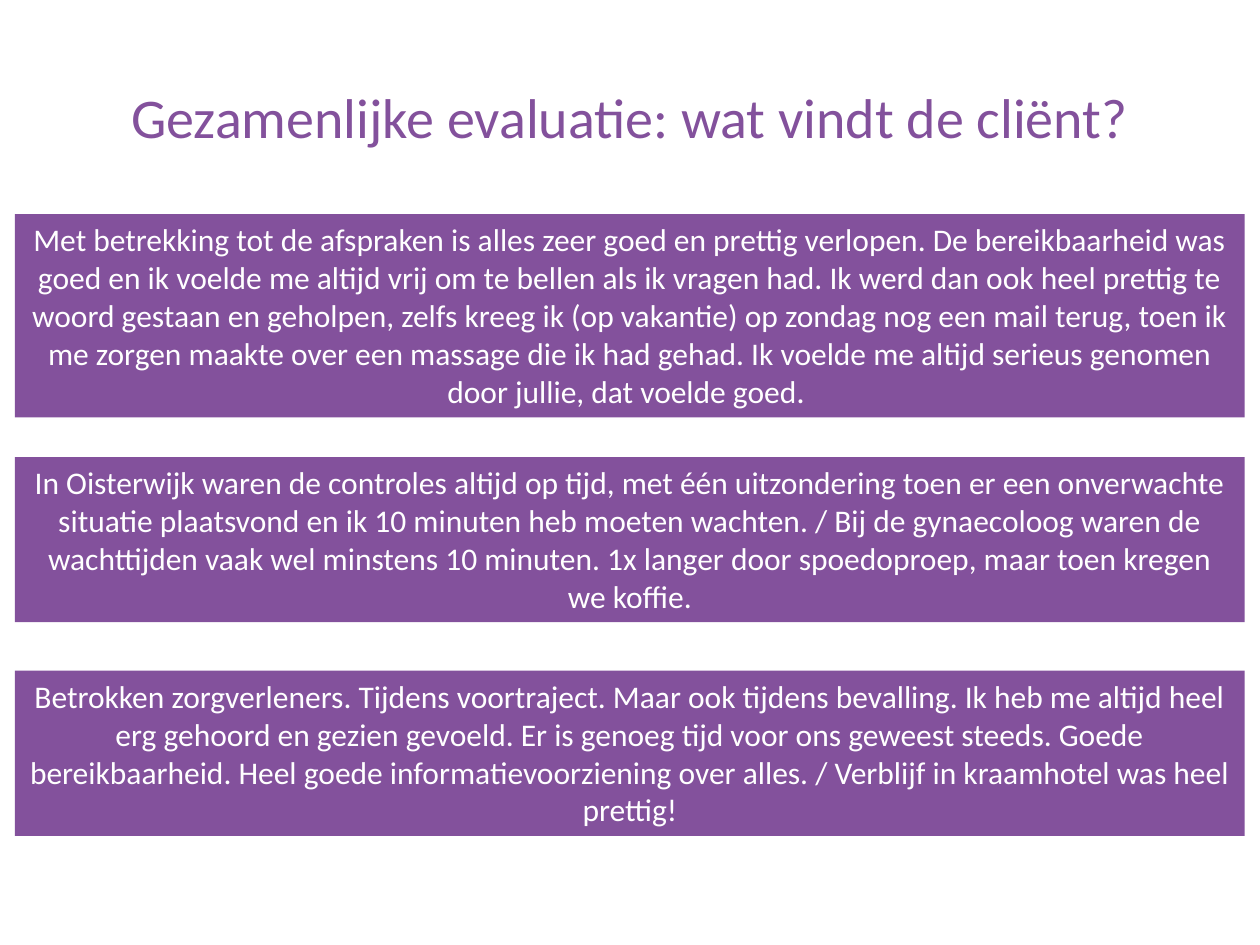
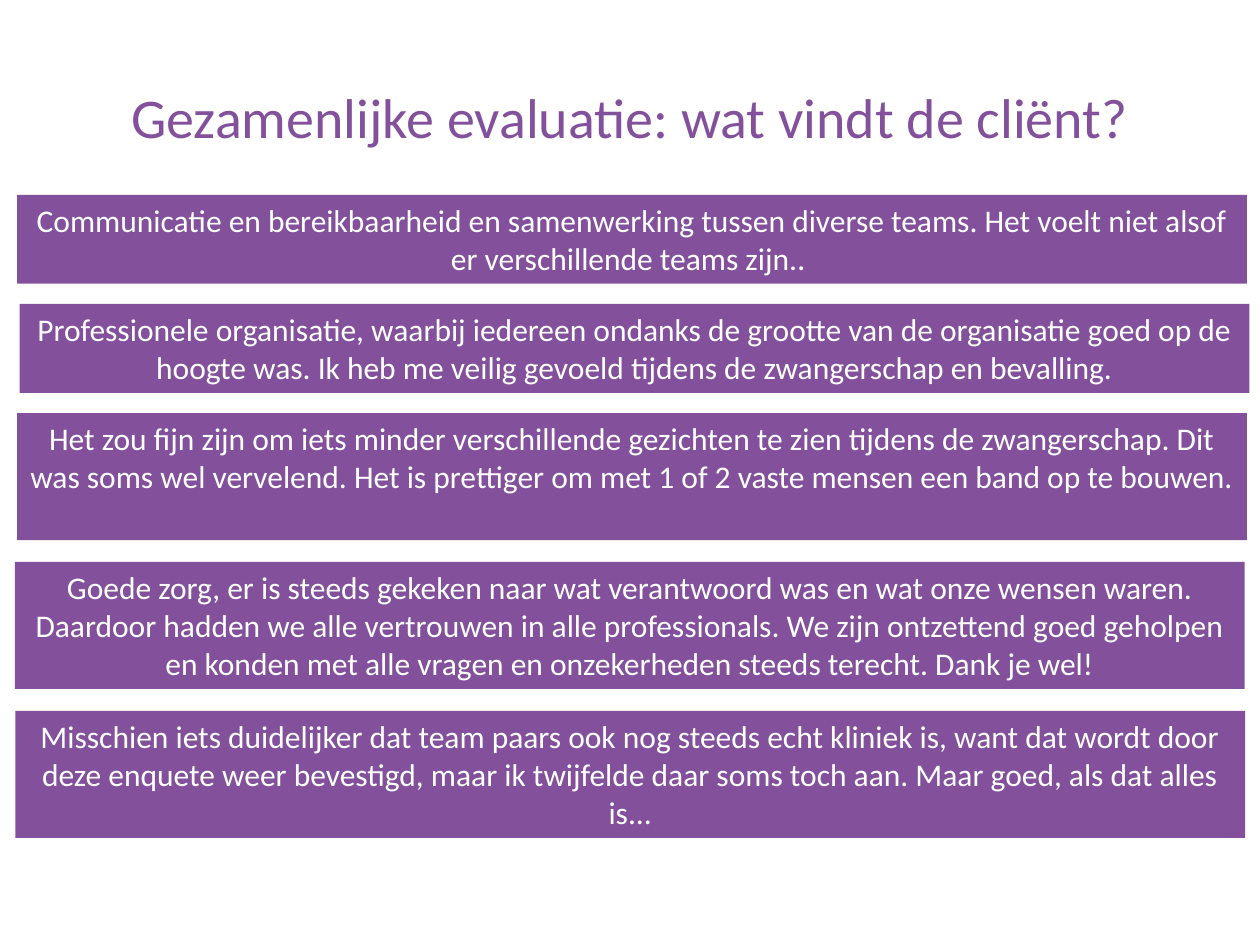
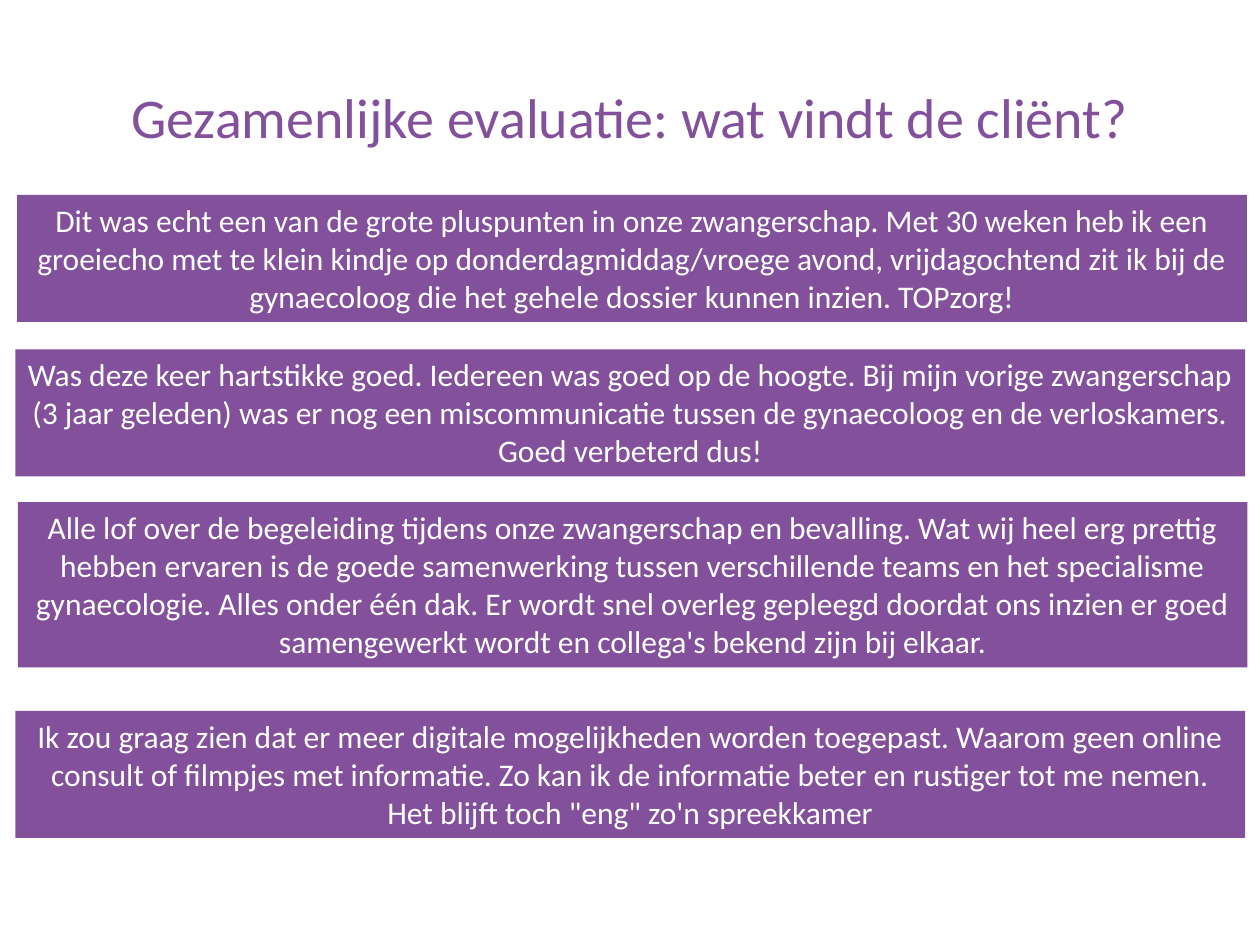
from pptx import Presentation
from pptx.dml.color import RGBColor
from pptx.enum.shapes import MSO_SHAPE as Shape
from pptx.enum.text import MSO_ANCHOR as Anchor, MSO_AUTO_SIZE as AutoSize, PP_ALIGN as Align
from pptx.util import Pt

COLORS = {"purple": "83519C", "white": "FFFFFF"}
TITLE = "Gezamenlijke evaluatie: wat vindt de cliënt?"
FONT, ENDING_FONT = "Calibri", "Lato"
QUOTE_WIDTH = 702.7
LINE_HEIGHT, PADDING = 21.8, 7.2

# Quotes per slide: left, top, number of lines, text, optional ending in the second font
slides = [
    [
        (8.6, 122.4, 5,
         "Met betrekking tot de afspraken is alles zeer goed en prettig verlopen. "
         "De bereikbaarheid was goed en ik voelde me altijd vrij om te bellen als ik "
         "vragen had. Ik werd dan ook heel prettig te woord gestaan en geholpen, zelfs "
         "kreeg ik (op vakantie) op zondag nog een mail terug, toen ik me zorgen maakte "
         "over een massage die ik had gehad. Ik voelde me altijd serieus genomen door "
         "jullie, dat voelde goed", ". "),
        (8.6, 261.2, 4,
         "In Oisterwijk waren de controles altijd op tijd, met één uitzondering toen er "
         "een onverwachte situatie plaatsvond en ik 10 minuten heb moeten wachten. / Bij "
         "de gynaecoloog waren de wachttijden vaak wel minstens 10 minuten. 1x langer "
         "door spoedoproep, maar toen kregen we koffie."),
        (8.6, 383.3, 4,
         "Betrokken zorgverleners. Tijdens voortraject. Maar ook tijdens bevalling. Ik "
         "heb me altijd heel erg gehoord en gezien gevoeld. Er is genoeg tijd voor ons "
         "geweest steeds. Goede bereikbaarheid. Heel goede informatievoorziening over "
         "alles. / Verblijf in kraamhotel was heel prettig!"),
    ],
    [
        (9.8, 111.4, 2,
         "Communicatie en bereikbaarheid en samenwerking tussen diverse teams. Het voelt "
         "niet alsof er verschillende teams zijn.", ". "),
        (11.3, 173.7, 2,
         "Professionele organisatie, waarbij iedereen ondanks de grootte van de "
         "organisatie goed op de hoogte was. Ik heb me veilig gevoeld tijdens de "
         "zwangerschap en bevalling."),
        (9.8, 236, 3,
         "Het zou fijn zijn om iets minder verschillende gezichten te zien tijdens de "
         "zwangerschap. Dit was soms wel vervelend. Het is prettiger om met 1 of 2 vaste "
         "mensen een band op te bouwen."),
        (8.6, 321.1, 3,
         "Goede zorg, er is steeds gekeken naar wat verantwoord was en wat onze wensen "
         "waren. Daardoor hadden we alle vertrouwen in alle professionals. We zijn "
         "ontzettend goed geholpen en konden met alle vragen en onzekerheden steeds "
         "terecht. Dank je wel!"),
        (8.8, 406.2, 3,
         "Misschien iets duidelijker dat team paars ook nog steeds echt kliniek is, want "
         "dat wordt door deze enquete weer bevestigd, maar ik twijfelde daar soms toch "
         "aan. Maar goed, als dat alles is..."),
    ],
    [
        (9.8, 111.4, 3,
         "Dit was echt een van de grote pluspunten in onze zwangerschap. Met 30 weken heb "
         "ik een groeiecho met te klein kindje op donderdagmiddag/vroege avond, "
         "vrijdagochtend zit ik bij de gynaecoloog die het gehele dossier kunnen inzien. "
         "TOPzorg!"),
        (8.8, 199.6, 3,
         "Was deze keer hartstikke goed. Iedereen was goed op de hoogte. Bij mijn vorige "
         "zwangerschap (3 jaar geleden) was er nog een miscommunicatie tussen de "
         "gynaecoloog en de verloskamers. Goed verbeterd dus!"),
        (10.2, 287, 4,
         "Alle lof over de begeleiding tijdens onze zwangerschap en bevalling. Wat wij "
         "heel erg prettig hebben ervaren is de goede samenwerking tussen verschillende "
         "teams en het specialisme gynaecologie. Alles onder één dak. Er wordt snel "
         "overleg gepleegd doordat ons inzien er goed samengewerkt wordt en collega's "
         "bekend zijn bij elkaar."),
        (8.8, 406.2, 3,
         "Ik zou graag zien dat er meer digitale mogelijkheden worden toegepast. Waarom "
         "geen online consult of filmpjes met informatie. Zo kan ik de informatie beter "
         "en rustiger tot me nemen. Het blijft toch \"eng\" zo'n spreekkamer"),
    ],
]


def add_run(paragraph, text, size, color, font=FONT):
    paragraph.alignment = Align.CENTER
    run = paragraph.add_run()
    run.text = text
    run.font.name = font
    run.font.size = Pt(size)
    run.font.color.rgb = RGBColor.from_string(COLORS[color])


presentation = Presentation()
presentation.slide_width, presentation.slide_height = Pt(720), Pt(540)
title_only = presentation.slide_layouts[5]

for quotes in slides:
    slide = presentation.slides.add_slide(title_only)

    # Title
    title = slide.shapes.title
    title.left, title.top, title.width, title.height = Pt(36), Pt(21.6), Pt(648), Pt(90)
    title.text_frame.vertical_anchor = Anchor.MIDDLE
    add_run(title.text_frame.paragraphs[0], TITLE, 32, "purple")

    # Quote bands
    for left, top, lines, text, *ending in quotes:
        band = slide.shapes.add_shape(
            Shape.RECTANGLE, Pt(left), Pt(top), Pt(QUOTE_WIDTH), Pt(PADDING + lines * LINE_HEIGHT))
        band.shadow.inherit = False
        band.fill.solid()
        band.fill.fore_color.rgb = RGBColor.from_string(COLORS["purple"])
        band.line.fill.background()
        frame = band.text_frame
        frame.word_wrap = True
        frame.auto_size = AutoSize.NONE
        frame.vertical_anchor = Anchor.TOP
        add_run(frame.paragraphs[0], text, 18, "white")
        for mark in ending:
            add_run(frame.paragraphs[0], mark, 18, "white", ENDING_FONT)

presentation.save("out.pptx")
